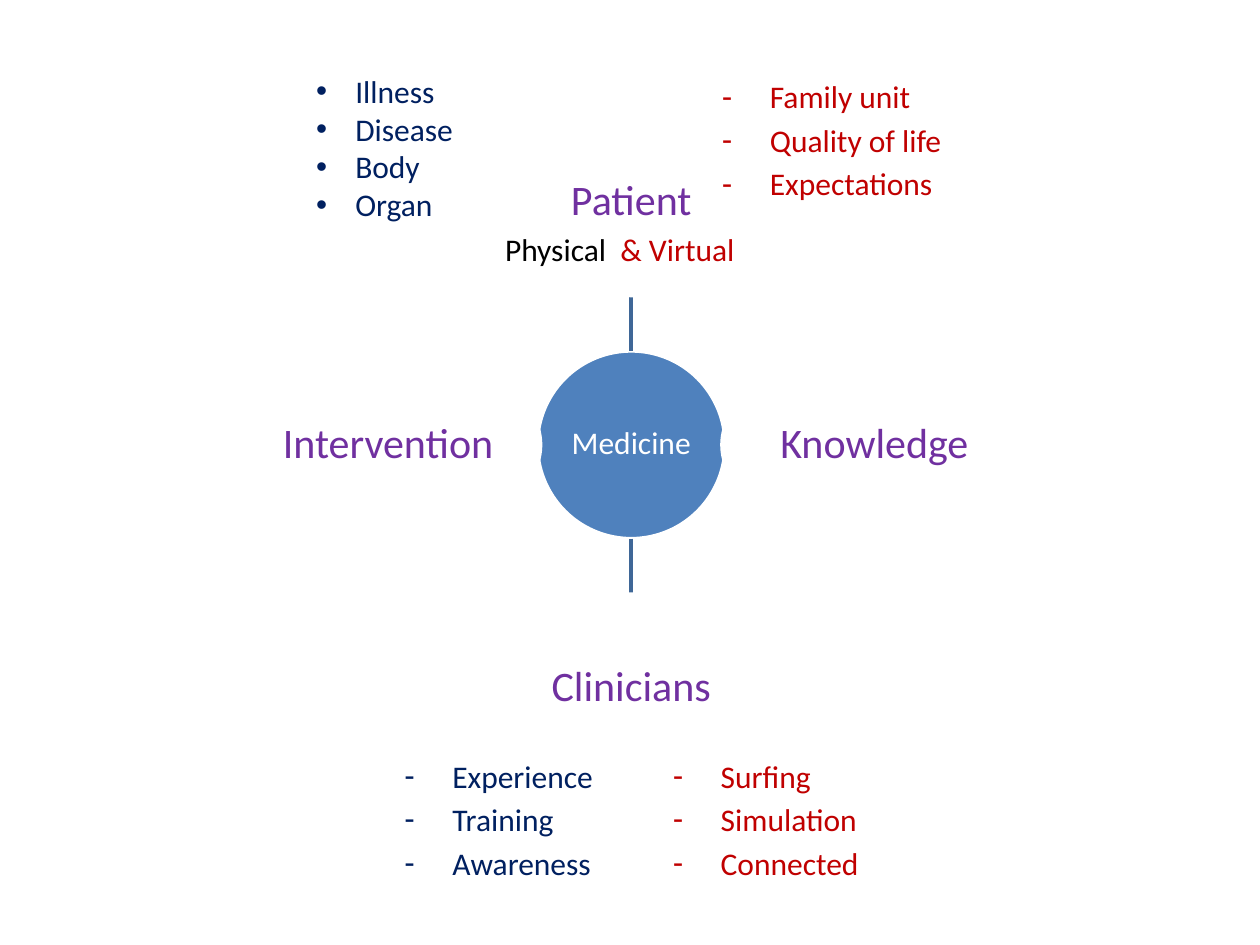
"""Build a slide with medicine as a hub, four themes around it and lists of examples."""
from lxml import etree
from pptx import Presentation
from pptx import util as u
from pptx.dml.color import RGBColor
from pptx.enum import shapes, text
from pptx.oxml import ns

WHITE = RGBColor(0xFF, 0xFF, 0xFF)
BLACK = RGBColor(0, 0, 0)
BLUE = RGBColor(0x4F, 0x81, 0xBD)
SPOKE_BLUE = RGBColor(0x3F, 0x67, 0x97)
PURPLE = RGBColor(0x70, 0x30, 0xA0)
NAVY = RGBColor(0, 0x20, 0x60)
RED = RGBColor(0xC0, 0, 0)

THEMES = [("Patient", 0, -1), ("Knowledge", 1, 0),
          ("Clinicians", 0, 1), ("Intervention", -1, 0)]
PATIENT_KINDS = [("Physical  ", BLACK), ("& Virtual", RED)]
DASH = dict(bullet="-", indent=0.38, spacing=1.15)
DOT = dict(bullet="•", indent=0.31, spacing=1)
LISTS = [
    (["Experience", "Training", "Awareness"], (3.11, 5.91, 2.28, 1.59), NAVY, DASH),
    (["Surfing", "Simulation", "Connected"], (5.24, 5.91, 2.05, 1.15), RED, DASH),
    (["Family unit", "Quality of life", "Expectations"], (5.63, 0.52, 2.21, 1.15), RED, DASH),
    (["Illness", "Disease", "Body", "Organ"], (2.41, 0.52, 1.5, 1.31), NAVY, DOT),
]

CENTER_X, CENTER_Y = 5.01, 3.53
HUB_RADIUS = 0.745
THEME_HALF_WIDTH = 1.21
ORBIT = 1.93


def write(paragraph, wording, color, size=18, align=text.PP_ALIGN.LEFT,
          spacing=1, bullet=None, indent=0):
    paragraph.alignment = align
    paragraph.line_spacing = spacing
    paragraph.space_before = u.Pt(0)
    if bullet:
        properties = paragraph._p.get_or_add_pPr()
        properties.set("marL", str(u.Inches(indent)))
        properties.set("indent", str(-u.Inches(indent)))
        etree.SubElement(properties, ns.qn("a:buFont"), typeface="Arial")
        etree.SubElement(properties, ns.qn("a:buChar"), char=bullet)
    run = paragraph.add_run()
    run.text = wording
    run.font.name = "Calibri"
    run.font.size = u.Pt(size)
    run.font.bold = False
    run.font.color.rgb = color


def add_oval(slide, wording, x, y, half_width, fill, color, size):
    oval = slide.shapes.add_shape(
        shapes.MSO_SHAPE.OVAL, u.Inches(x - half_width), u.Inches(y - HUB_RADIUS),
        u.Inches(2 * half_width), u.Inches(2 * HUB_RADIUS))
    oval.shadow.inherit = False
    oval.fill.solid()
    oval.fill.fore_color.rgb = fill
    oval.line.color.rgb = WHITE
    oval.line.width = u.Pt(2)
    frame = oval.text_frame
    frame.word_wrap = False
    frame.vertical_anchor = text.MSO_ANCHOR.MIDDLE
    frame.margin_left = frame.margin_right = u.Inches(0.02)
    frame.margin_top = frame.margin_bottom = u.Inches(0.02)
    write(frame.paragraphs[0], wording, color, size=size,
          align=text.PP_ALIGN.CENTER, spacing=0.9)


def add_theme(slide, name, dx, dy):
    reach = ORBIT - (THEME_HALF_WIDTH if dx else HUB_RADIUS)
    ends = [u.Inches(start + step * distance) for distance in (HUB_RADIUS, reach)
            for start, step in ((CENTER_X, dx), (CENTER_Y, dy))]
    spoke = slide.shapes.add_connector(shapes.MSO_CONNECTOR.STRAIGHT, *ends)
    spoke.line.color.rgb = SPOKE_BLUE
    spoke.line.width = u.Pt(2)
    etree.SubElement(spoke._element.spPr, ns.qn("a:effectLst"))
    add_oval(slide, name, CENTER_X + dx * ORBIT, CENTER_Y + dy * ORBIT,
             THEME_HALF_WIDTH, WHITE, PURPLE, 24)


def fill_list(slide, body, items, place, color, style):
    slide.shapes._spTree.append(body._element)
    body.left, body.top, body.width, body.height = map(u.Inches, place)
    frame = body.text_frame
    frame.word_wrap = True
    frame.auto_size = text.MSO_AUTO_SIZE.NONE
    frame.vertical_anchor = text.MSO_ANCHOR.TOP
    for number, item in enumerate(items):
        paragraph = frame.add_paragraph() if number else frame.paragraphs[0]
        write(paragraph, item, color, **style)


def main():
    deck = Presentation()
    deck.slide_width, deck.slide_height = u.Inches(10), u.Inches(7.5)
    slide = deck.slides.add_slide(deck.slide_layouts.get_by_name("Comparison"))
    title, *bodies = list(slide.placeholders)
    title._element.getparent().remove(title._element)

    add_oval(slide, "Medicine", CENTER_X, CENTER_Y, HUB_RADIUS, BLUE, WHITE, 18)
    for theme in THEMES:
        add_theme(slide, *theme)

    kinds = slide.shapes.add_textbox(*map(u.Inches, (3.91, 1.78, 2.05, 0.4)))
    kinds.text_frame.word_wrap = True
    for wording, color in PATIENT_KINDS:
        write(kinds.text_frame.paragraphs[0], wording, color)

    for body, content in zip(bodies, LISTS):
        fill_list(slide, body, *content)
    deck.save("out.pptx")


if __name__ == "__main__":
    main()
